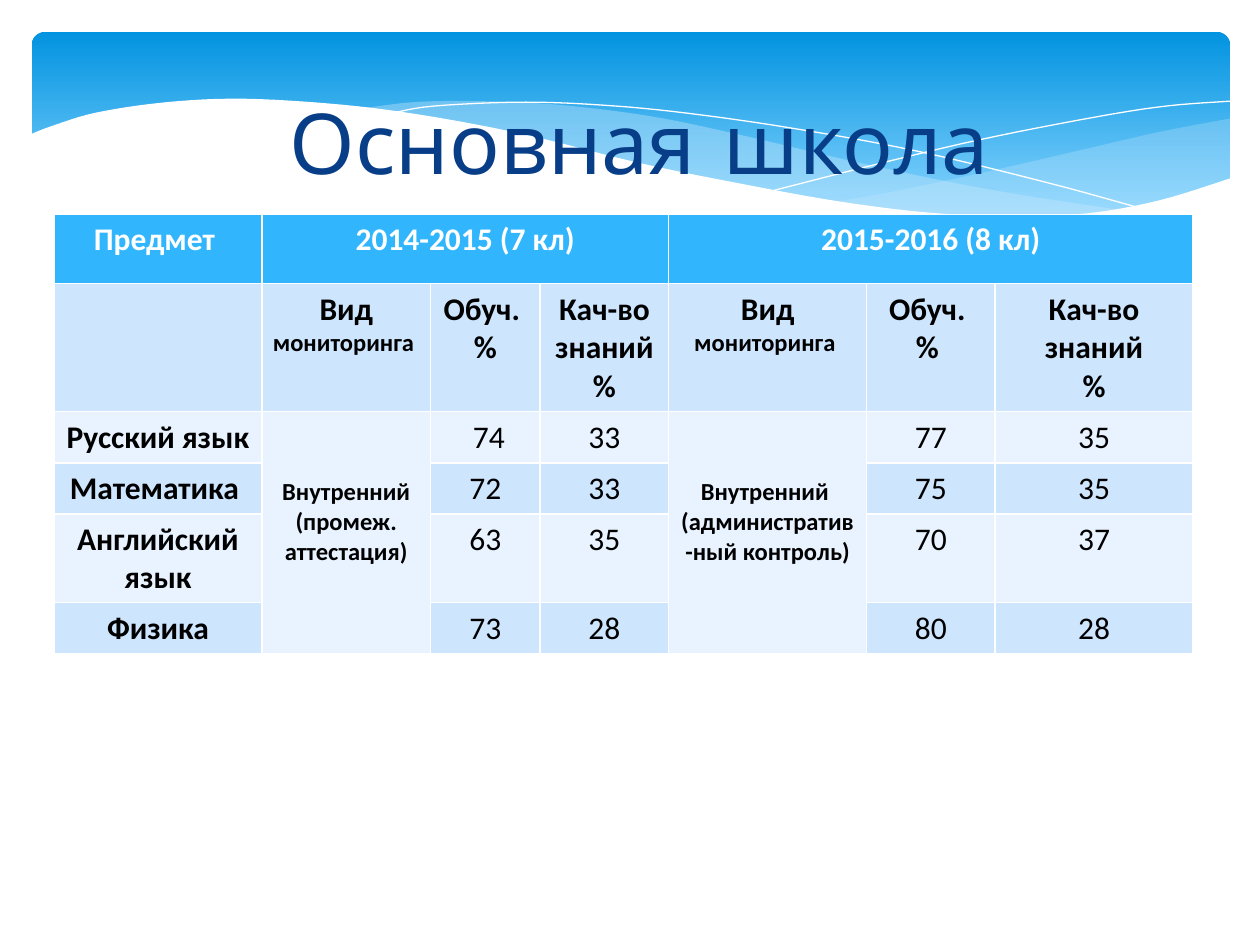
from lxml.etree import SubElement
from pptx import Presentation
from pptx.dml.color import RGBColor
from pptx.enum.shapes import MSO_SHAPE
from pptx.enum.text import MSO_ANCHOR, PP_ALIGN
from pptx.oxml.ns import qn
from pptx.util import Cm, Pt

WHITE = RGBColor(0xFF, 0xFF, 0xFF)
BLACK = RGBColor(0, 0, 0)
NAVY = RGBColor(0x07, 0x3E, 0x87)
DEEP = RGBColor(0x02, 0x93, 0xE0)
SKY = RGBColor(0x83, 0xD3, 0xFE)
MIST = RGBColor(0xC6, 0xE7, 0xFC)
HEAD = RGBColor(0x31, 0xB6, 0xFD)
BANDS = (RGBColor(0xCE, 0xE5, 0xFE), RGBColor(0xE8, 0xF3, 0xFF))

RIGHT = [
    [(24.16, 1.75), (22.78, 2.01), (21.26, 2.36), (19.18, 2.84), (17.32, 3.23), (16.18, 3.43)],
    [(16.18, 3.43), (17.3, 3.58), (18.62, 3.68), (20.07, 3.73), (21.31, 3.68), (22.58, 3.48),
     (23.52, 3.23), (24.16, 2.97)],
]
MIDDLE = [
    [(6.65, 1.55), (7.7, 1.42), (9.02, 1.4), (10.59, 1.47), (12.45, 1.7), (14.2, 2.06),
     (16.36, 2.57), (18.21, 2.97), (19.89, 3.28), (22.07, 3.61)],
    [(22.07, 3.61), (20.93, 3.73), (19.61, 3.76), (18.08, 3.66), (16.28, 3.45), (14.22, 3.07),
     (11.84, 2.57), (10.21, 2.16), (8.59, 1.83), (6.65, 1.55)],
]
FALLING = [(7.24, 1.65), (8.1, 1.5), (9.96, 1.42), (11.79, 1.5), (13.51, 1.68), (15.54, 1.98),
           (17.86, 2.41), (20.5, 3.05), (22.43, 3.58)]
RISING = [(14.96, 3.2), (17.04, 2.67), (19.1, 2.18), (21.39, 1.73), (22.86, 1.5), (24.16, 1.4)]
FRONT = [
    [(24.18, 2.95), (22.73, 3.4), (21.29, 3.66), (19.91, 3.71), (18.26, 3.66), (16.33, 3.43),
     (14.07, 3.02), (12.14, 2.62), (9.98, 2.08), (8, 1.7), (6.25, 1.47), (4.27, 1.35),
     (2.72, 1.42), (1.3, 1.63), (0.38, 1.91), (-0.05, 2.08)],
    [(-0.05, 5.05), (24.18, 5.05)],
]

WIDTHS = (4.19, 3.4, 2.21, 2.59, 3.99, 2.59, 3.99)
HEIGHTS = (1.4, 2.58, 1.03, 1.03, 1.79, 1.03)
YEARS = {1: "2014-2015 (7 кл)", 4: "2015-2016 (8 кл)"}
KINDS = {1: "Внутренний\n(промеж. аттестация)",
         4: "Внутренний \n(административ-ный контроль)"}
QUALITY = "Кач-во знаний\n%"
MARKS = {2: "Обуч. \n%", 3: QUALITY, 5: "Обуч. \n% ", 6: QUALITY}
SCORES = (
    ("Русский язык", " 74", "33", "77", "35"),
    ("Математика ", "72", "33", "75", "35"),
    ("Английский язык", "63", "35", "70", "37"),
    ("Физика", "73", "28", "80", "28"),
)


def spline(knots, steps=6):
    """Return points of a smooth curve through the knots."""
    ends = [knots[0], *knots, knots[-1]]
    points = []
    for a, b, c, d in zip(ends, ends[1:], ends[2:], ends[3:]):
        for step in range(steps):
            t = step / steps
            points.append(tuple(
                q + t / 2 * (r - p + t * (2 * p - 5 * q + 4 * r - s + t * (3 * (q - r) + s - p)))
                for p, q, r, s in zip(a, b, c, d)))
    return points + [knots[-1]]


def draw(slide, left, top, curves, close):
    """Draw joined curves measured from the given corner."""
    points = [(Cm(left + x), Cm(top + y)) for curve in curves for x, y in spline(curve)]
    pen = slide.shapes.build_freeform(*points[0])
    pen.add_line_segments(points[1:], close=close)
    shape = pen.convert_to_shape()
    shape.shadow.inherit = False
    return shape


def wave(slide, left, top, curves, color, alpha=100):
    """Draw a filled wave with the given opacity."""
    shape = draw(slide, left, top, curves, True)
    shape.fill.solid()
    shape.fill.fore_color.rgb = color
    shape.line.fill.background()
    if alpha < 100:
        tint = shape.fill._xPr.find(".//" + qn("a:srgbClr"))
        SubElement(tint, qn("a:alpha")).set("val", str(alpha * 1000))


def banner(slide, left, top, width, height):
    """Place the gradient panel and its waves."""
    panel = slide.shapes.add_shape(
        MSO_SHAPE.ROUNDED_RECTANGLE, Cm(left), Cm(top), Cm(width), Cm(height))
    panel.adjustments[0] = 0.07
    panel.shadow.inherit = False
    panel.line.fill.background()
    panel.fill.gradient()
    panel.fill.gradient_angle = 270
    for stop, color, place in zip(panel.fill.gradient_stops, (DEEP, SKY), (0, 0.9)):
        stop.color.rgb = color
        stop.position = place
    wave(slide, left, top, RIGHT, MIST, 29)
    wave(slide, left, top, MIDDLE, MIST, 40)
    for curve in (FALLING, RISING):
        line = draw(slide, left, top, [curve], False)
        line.fill.background()
        line.line.color.rgb = WHITE
        line.line.width = Pt(0)
    wave(slide, left, top, FRONT, WHITE)


def style(run, size, color, bold, name="Calibri"):
    """Set the font of a run."""
    run.font.name = name
    run.font.size = Pt(size)
    run.font.color.rgb = color
    run.font.bold = bold


def title(slide, left, top, width, height):
    """Place the slide title."""
    frame = slide.shapes.add_textbox(Cm(left), Cm(top), Cm(width), Cm(height)).text_frame
    frame.word_wrap = True
    frame.vertical_anchor = MSO_ANCHOR.BOTTOM
    frame.text = "Основная школа"
    frame.paragraphs[0].alignment = PP_ALIGN.CENTER
    style(frame.paragraphs[0].runs[0], 48, NAVY, False, "Comic Neue")


def write(cell, text, size=18, color=BLACK, bold=True):
    """Write centred text in a cell."""
    cell.text_frame.text = text
    for para in cell.text_frame.paragraphs:
        para.alignment = PP_ALIGN.CENTER
        for run in para.runs:
            style(run, size, color, bold)


def results(slide, left, top):
    """Place the table of results."""
    table = slide.shapes.add_table(
        len(HEIGHTS), len(WIDTHS), Cm(left), Cm(top),
        Cm(sum(WIDTHS)), Cm(sum(HEIGHTS))).table
    for col, width in zip(table.columns, WIDTHS):
        col.width = Cm(width)
    for index, (row, height) in enumerate(zip(table.rows, HEIGHTS)):
        row.height = Cm(height)
        for cell in row.cells:
            cell.margin_left = cell.margin_right = Cm(0.18)
            cell.margin_top = cell.margin_bottom = Cm(0.13)
            cell.fill.solid()
            cell.fill.fore_color.rgb = BANDS[(index + 1) % 2] if index else HEAD
    write(table.cell(0, 0), "Предмет ", color=WHITE)
    for col, year in YEARS.items():
        table.cell(0, col).merge(table.cell(0, col + 2))
        write(table.cell(0, col), year, color=WHITE)
        label = table.cell(1, col)
        write(label, "Вид ")
        run = label.text_frame.paragraphs[0].add_run()
        run.text = "мониторинга "
        style(run, 14, BLACK, True)
        kind = table.cell(2, col)
        kind.merge(table.cell(5, col))
        kind.margin_top = Cm(1.33)
        write(kind, KINDS[col], 14)
    for col, mark in MARKS.items():
        write(table.cell(1, col), mark)
    for row, (subject, *scores) in enumerate(SCORES, 2):
        write(table.cell(row, 0), subject)
        for col, score in zip(MARKS, scores):
            write(table.cell(row, col), score, bold=False)


def main():
    """Build and save the slide."""
    deck = Presentation()
    deck.slide_width, deck.slide_height = Cm(25.4), Cm(19.05)
    slide = deck.slides.add_slide(deck.slide_layouts[6])
    banner(slide, 0.64, 0.64, 24.16, 3.96)
    title(slide, 1.27, 0.76, 23.24, 3.23)
    results(slide, 1.09, 4.32)
    deck.save("out.pptx")


if __name__ == "__main__":
    main()
